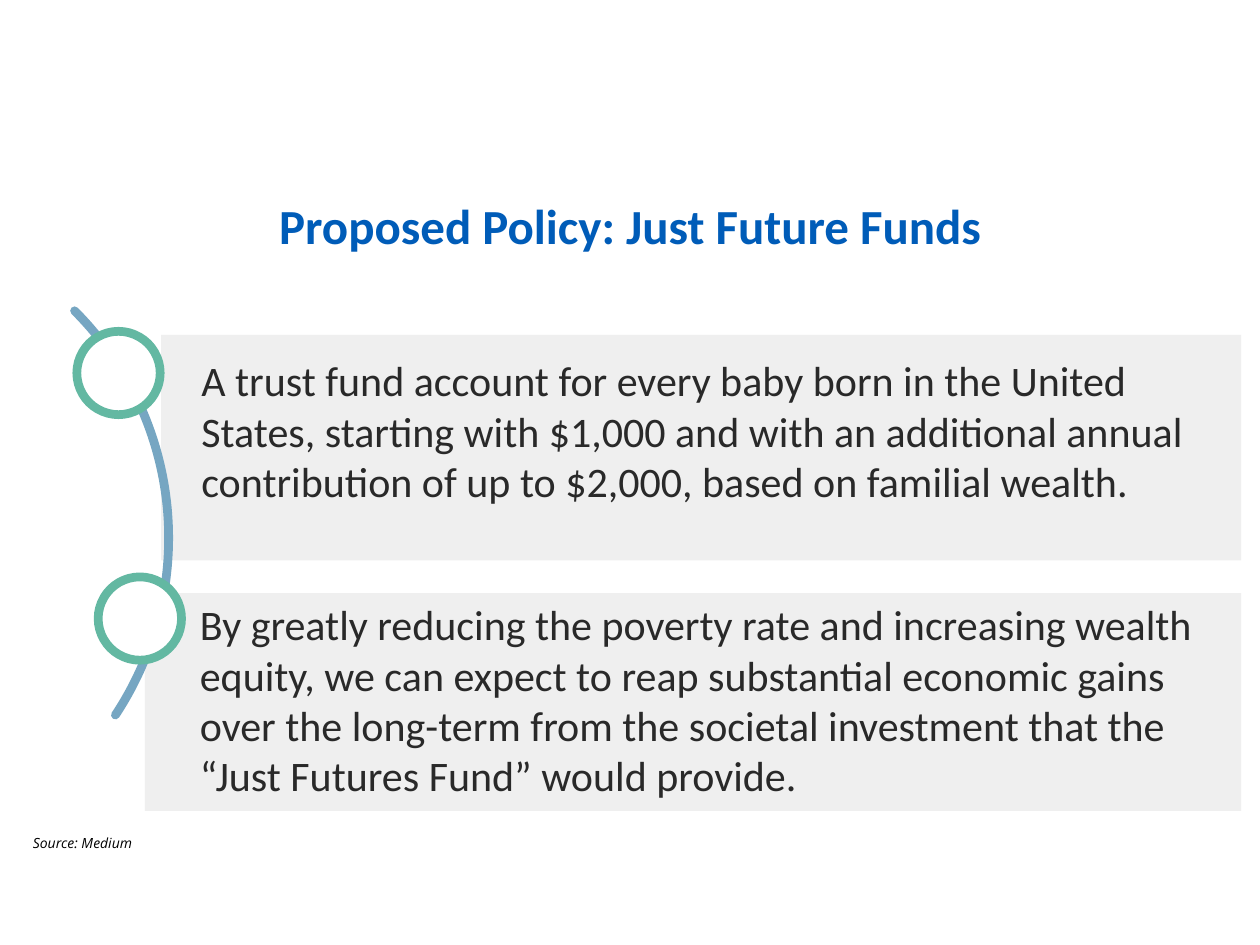
from pptx import Presentation
from pptx.dml.color import RGBColor
from pptx.enum.shapes import MSO_SHAPE
from pptx.enum.text import MSO_ANCHOR, PP_ALIGN
from pptx.util import Cm, Pt

RECTANGLE, OVAL, BLOCK_ARC = MSO_SHAPE.RECTANGLE, MSO_SHAPE.OVAL, MSO_SHAPE.BLOCK_ARC
TOP, MIDDLE = MSO_ANCHOR.TOP, MSO_ANCHOR.MIDDLE
LEFT, CENTER, RIGHT = PP_ALIGN.LEFT, PP_ALIGN.CENTER, PP_ALIGN.RIGHT

BLUE = RGBColor(0x00, 0x5C, 0xB8)
GRAY = RGBColor(0xEF, 0xEF, 0xEF)
STEEL = RGBColor(0x76, 0xA6, 0xC2)
GREEN = RGBColor(0x63, 0xB8, 0xA2)
WHITE = RGBColor(0xFF, 0xFF, 0xFF)
DARK = RGBColor(0x29, 0x29, 0x29)
BLACK = RGBColor(0x00, 0x00, 0x00)

TITLE = "Proposed Policy: Just Future Funds"
SOURCE = "Source: Medium"
POINTS = [
    {
        "text": "A trust fund account for every baby born in the United States, "
                "starting with $1,000 and with an additional annual contribution "
                "of up to $2,000, based on familial wealth.",
        "panel": (3.25, 6.75, 21.77, 4.55),
        "circle": (1.55, 6.68),
        "text_box": (3.81, 6.58, 21.13, 4.2),
    },
    {
        "text": "By greatly reducing the poverty rate and increasing wealth equity, "
                "we can expect to reap substantial economic gains over the long-term "
                "from the societal investment that the “Just Futures Fund” would provide.",
        "panel": (2.92, 11.96, 22.1, 4.39),
        "circle": (1.98, 11.63),
        "text_box": (3.78, 11.79, 20.98, 4.62),
    },
]
CIRCLE_SIZE = 1.68
ARC_BOX = (-9.55, 4.37, 12.95, 12.95)
ARC_ADJUSTMENTS = (189, 20.08, 0)
SOURCE_BOX = (0.25, 16.66, 2.67, 0.86)


def add_shape(slide, kind, box, fill=None, line=None):
    shape = slide.shapes.add_shape(kind, *map(Cm, box))
    shape.shadow.inherit = False
    if fill is None:
        shape.fill.background()
    else:
        shape.fill.solid()
        shape.fill.fore_color.rgb = fill
    if line is None:
        shape.line.fill.background()
    else:
        shape.line.color.rgb = line
        shape.line.width = Pt(5)
    return shape


def write(shape, text, size, color, name="Calibri", align=LEFT, anchor=MIDDLE,
          bold=False, italic=False):
    frame = shape.text_frame
    frame.text = text
    frame.word_wrap = True
    frame.vertical_anchor = anchor
    frame.margin_left = frame.margin_right = Cm(0.25)
    frame.margin_top = frame.margin_bottom = Cm(0.25)
    paragraph = frame.paragraphs[0]
    paragraph.alignment = align
    font = paragraph.runs[0].font
    font.name, font.size, font.color.rgb = name, Pt(size), color
    font.bold, font.italic = bold, italic
    return paragraph


def main():
    presentation = Presentation()
    presentation.slide_width, presentation.slide_height = Cm(25.4), Cm(19.05)
    slide = presentation.slides.add_slide(presentation.slide_layouts[5])

    title = slide.shapes.title
    title.left, title.top, title.width, title.height = map(Cm, (1.27, 2.54, 22.86, 3.18))
    write(title, TITLE, 28, BLUE, align=CENTER, bold=True).line_spacing = Pt(57)

    for point in POINTS:
        add_shape(slide, RECTANGLE, point["panel"], fill=GRAY)

    arc = add_shape(slide, BLOCK_ARC, ARC_BOX, line=STEEL)
    for index, value in enumerate(ARC_ADJUSTMENTS):
        arc.adjustments[index] = value

    for point in POINTS:
        circle_box = (*point["circle"], CIRCLE_SIZE, CIRCLE_SIZE)
        add_shape(slide, OVAL, circle_box, fill=WHITE, line=GREEN)
        text_box = slide.shapes.add_textbox(*map(Cm, point["text_box"]))
        write(text_box, point["text"], 24, DARK)

    source = slide.shapes.add_textbox(*map(Cm, SOURCE_BOX))
    write(source, SOURCE, 8, BLACK, name="Open Sans", align=RIGHT, anchor=TOP, italic=True)

    presentation.save("out.pptx")


if __name__ == "__main__":
    main()
